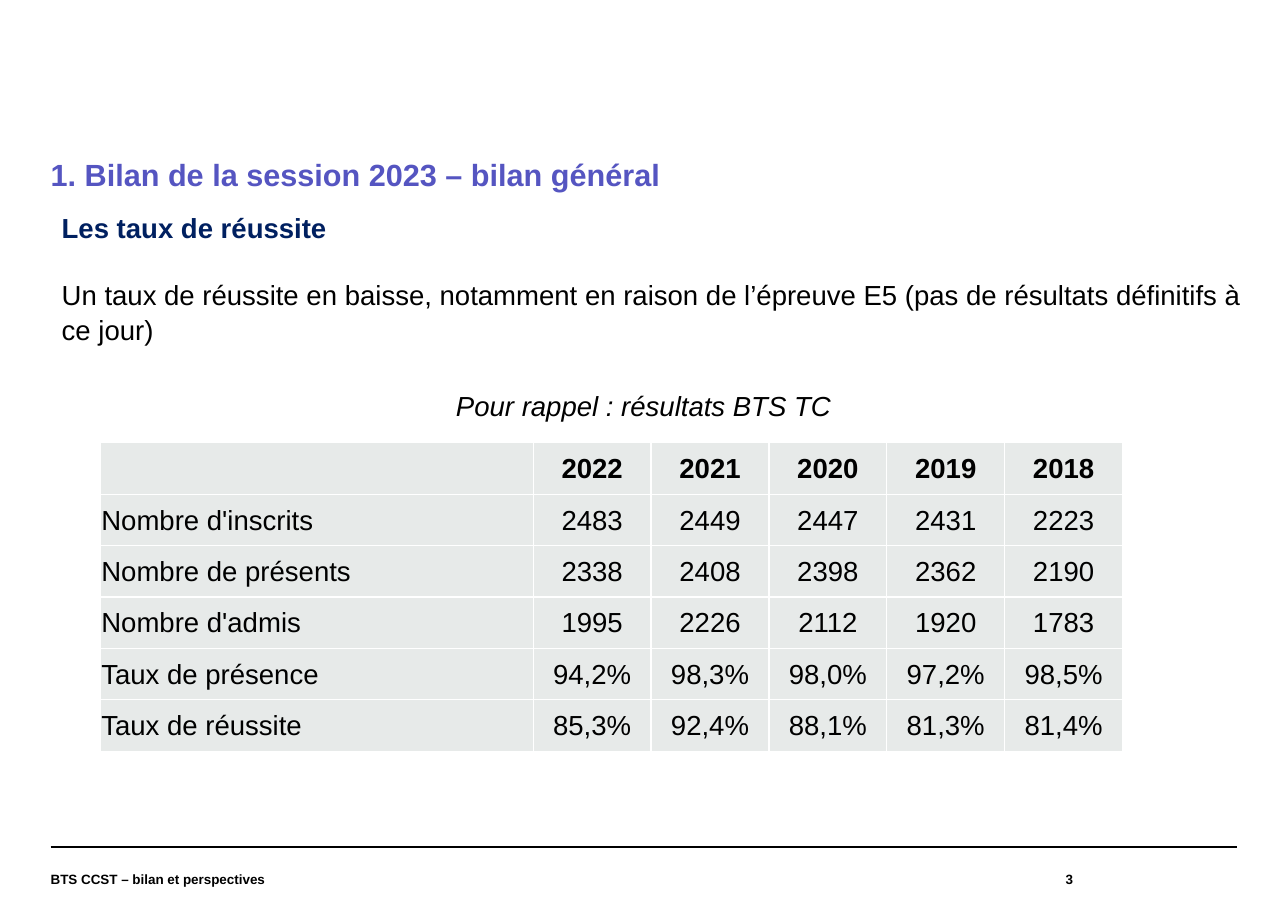
import pptx
import pptx.util
import pptx.dml.color
import pptx.enum.text
import pptx.enum.shapes
import pptx.oxml.ns
from lxml import etree

Inches = pptx.util.Inches
Pt = pptx.util.Pt
ALIGN = pptx.enum.text.PP_ALIGN
ANCHOR = pptx.enum.text.MSO_ANCHOR
qn = pptx.oxml.ns.qn


def color(code):
    return pptx.dml.color.RGBColor.from_string(code)


class Deck:
    font = "Arial"
    ink = "000000"
    navy = "002060"
    violet = "5555C1"
    gray = "E7EAE9"
    white = "FFFFFF"

    def __init__(self, width, height):
        self.deck = pptx.Presentation()
        self.deck.slide_width = Inches(width)
        self.deck.slide_height = Inches(height)
        self.slide = self.deck.slides.add_slide(self.deck.slide_layouts[1])

    def add_run(self, para, text, size=18, tone=ink, bold=False,
                italic=False, align=ALIGN.LEFT, space=1.0, before=0):
        para.alignment = align
        para.line_spacing = space
        para.space_before = Pt(before)
        run = para.add_run()
        run.text = text
        font = run.font
        font.name, font.size = self.font, Pt(size)
        font.bold, font.italic = bold, italic
        font.color.rgb = color(tone)

    def frame(self, shape, box, inset=(0.1, 0.05), anchor=ANCHOR.TOP):
        shape.left, shape.top, shape.width, shape.height = map(Inches, box)
        frame = shape.text_frame
        frame.word_wrap = True
        frame.auto_size = pptx.enum.text.MSO_AUTO_SIZE.NONE
        frame.vertical_anchor = anchor
        frame.margin_left = frame.margin_right = Inches(inset[0])
        frame.margin_top = frame.margin_bottom = Inches(inset[1])
        return frame

    def title(self, box, text):
        frame = self.frame(self.slide.shapes.title, box, (0, 0))
        self.add_run(frame.paragraphs[0], text, 20, self.violet, True,
                     space=0.9)

    def body(self, box, items):
        frame = self.frame(self.slide.placeholders[1], box)
        for i, (text, style) in enumerate(items):
            para = frame.add_paragraph() if i else frame.paragraphs[0]
            props = para._p.get_or_add_pPr()
            props.set("marL", "0")
            props.set("indent", "0")
            etree.SubElement(props, qn("a:buNone"))
            self.add_run(para, text, space=1.05, **style)

    def text(self, box, text, inset=(0.1, 0.05), anchor=ANCHOR.TOP, **style):
        shape = self.slide.shapes.add_textbox(*map(Inches, box))
        frame = self.frame(shape, box, inset, anchor)
        self.add_run(frame.paragraphs[0], text, **style)

    def line(self, left, right, top):
        line = self.slide.shapes.add_connector(
            pptx.enum.shapes.MSO_CONNECTOR.STRAIGHT,
            Inches(left), Inches(top), Inches(right), Inches(top))
        line.line.color.rgb = color(self.ink)
        line.line.width = Pt(0.8)
        etree.SubElement(line._element.spPr, qn("a:effectLst"))

    def border(self, cell):
        props = cell._tc.get_or_add_tcPr()
        for i, side in enumerate(("lnL", "lnR", "lnT", "lnB")):
            edge = etree.Element(qn("a:" + side), w=str(Pt(1)))
            fill = etree.SubElement(edge, qn("a:solidFill"))
            etree.SubElement(fill, qn("a:srgbClr"), val=self.white)
            props.insert(i, edge)

    def table(self, box, widths, rows):
        shape = self.slide.shapes.add_table(
            len(rows), len(widths), *map(Inches, box))
        table = shape.table
        table.first_row = table.horz_banding = False
        for col, width in zip(table.columns, widths):
            col.width = Inches(width)
        for r, row in enumerate(rows):
            table.rows[r].height = Inches(box[3] / len(rows))
            for c, text in enumerate(row):
                cell = table.cell(r, c)
                cell.fill.solid()
                cell.fill.fore_color.rgb = color(self.gray)
                self.border(cell)
                cell.vertical_anchor = ANCHOR.MIDDLE
                cell.margin_left = cell.margin_right = Inches(0.01)
                cell.margin_top, cell.margin_bottom = Inches(0.01), 0
                if text:
                    self.add_run(cell.text_frame.paragraphs[0], text,
                                 bold=r == 0,
                                 align=ALIGN.CENTER if c else ALIGN.LEFT)


def main():
    deck = Deck(11.69, 8.27)

    # Footer
    deck.line(0.46, 11.23, 7.69)
    foot = dict(inset=(0, 0), anchor=ANCHOR.MIDDLE, size=8.8, bold=True)
    deck.text((0.46, 7.69, 7.55, 0.58), "BTS CCST – bilan et perspectives",
              **foot)
    deck.text((8.01, 7.69, 1.73, 0.58), "3", align=ALIGN.RIGHT, **foot)

    # Heading and message
    deck.title((0.46, 1.45, 10.77, 1.16),
               "1. Bilan de la session 2023 – bilan général")
    deck.body((0.46, 1.85, 11.04, 1.92), [
        ("Les taux de réussite", dict(tone=deck.navy, bold=True)),
        ("Un taux de réussite en baisse, notamment en raison de l’épreuve E5 "
         "(pas de résultats définitifs à ce jour)", dict(before=21)),
    ])

    # Results of past years
    deck.text((4.04, 3.47, 5.51, 0.4), "Pour rappel : résultats BTS TC",
              italic=True, space=1.05)
    deck.table((0.91, 4.02, 9.28, 2.8), [3.93] + [1.07] * 5, [
        ("", "2022", "2021", "2020", "2019", "2018"),
        ("Nombre d'inscrits", "2483", "2449", "2447", "2431", "2223"),
        ("Nombre de présents", "2338", "2408", "2398", "2362", "2190"),
        ("Nombre d'admis", "1995", "2226", "2112", "1920", "1783"),
        ("Taux de présence", "94,2%", "98,3%", "98,0%", "97,2%", "98,5%"),
        ("Taux de réussite", "85,3%", "92,4%", "88,1%", "81,3%", "81,4%"),
    ])

    deck.deck.save("out.pptx")


if __name__ == "__main__":
    main()
